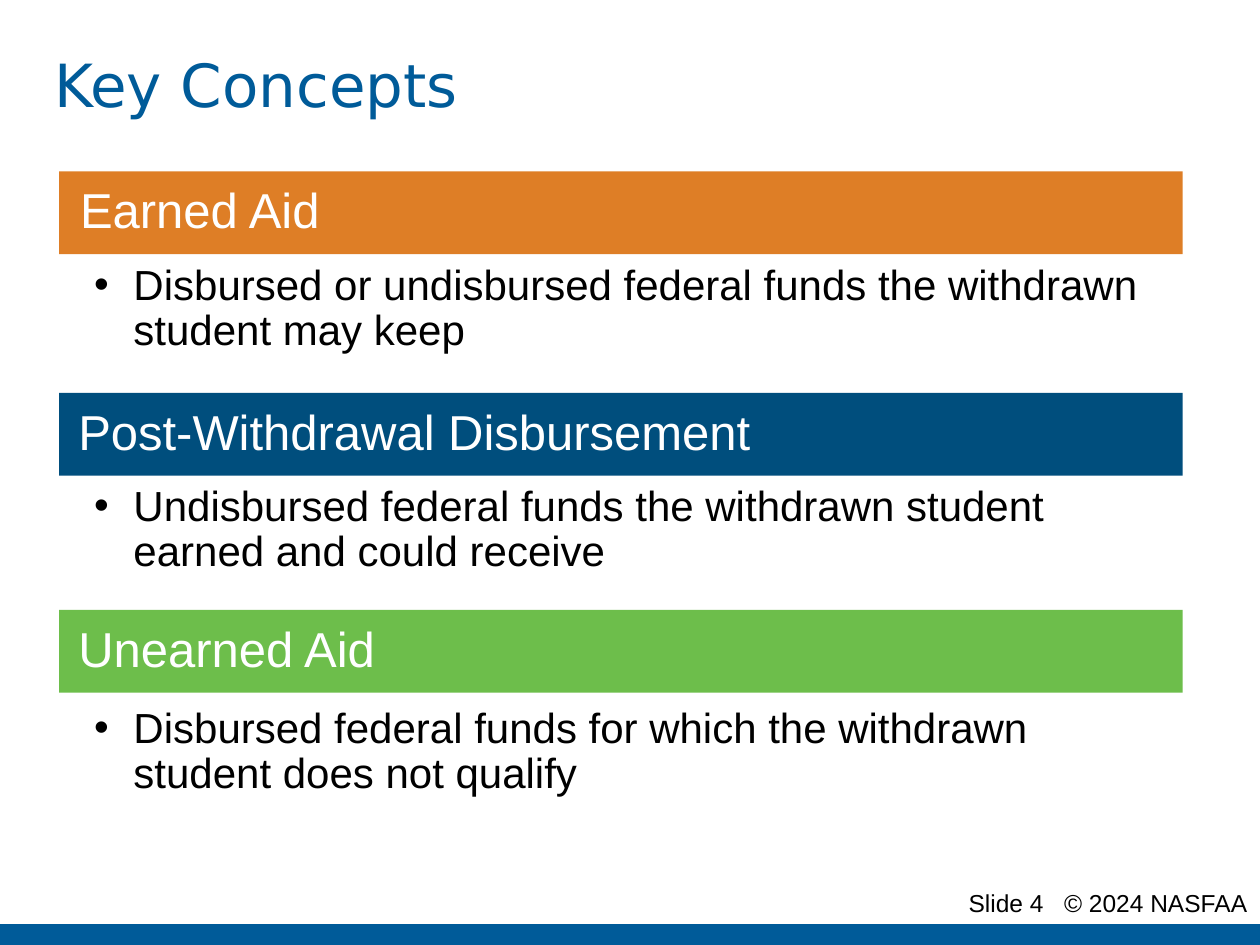
import pptx
import pptx.dml.color
import pptx.enum.shapes
import pptx.enum.text
import pptx.oxml.ns
import pptx.util
from lxml import etree

Pt = pptx.util.Pt
ANCHOR = pptx.enum.text.MSO_ANCHOR
ALIGN = pptx.enum.text.PP_ALIGN

CONCEPTS = [
    ("Earned Aid", "DE7E26", 98, 12,
     "Disbursed or undisbursed federal funds the withdrawn student may keep", 149.8, 73, (20, 1, 3, 1)),
    ("Post-Withdrawal Disbursement", "004E7D", 224.5, 11,
     "Undisbursed federal funds the withdrawn student earned and could receive", 276, 65, (20, 1, 3, 1)),
    ("Unearned Aid", "6DBE4B", 348.5, 11,
     "Disbursed federal funds for which the withdrawn student does not qualify", 400.3, 48, (20, 3.6, 20, 3.6)),
]


def color(value):
    return pptx.dml.color.RGBColor.from_string(value)


def add_bar(page, box, fill):
    bar = page.shapes.add_shape(pptx.enum.shapes.MSO_SHAPE.RECTANGLE, *map(Pt, box))
    bar.shadow.inherit = False
    bar.fill.solid()
    bar.fill.fore_color.rgb = color(fill)
    bar.line.fill.background()
    return bar


def write_text(shape, text, size, fill, font="Arial", insets=(7.2, 3.6, 7.2, 3.6),
               anchor=ANCHOR.TOP, align=ALIGN.LEFT, spacing=1.0):
    frame = shape.text_frame
    frame.text = text
    frame.word_wrap = True
    frame.vertical_anchor = anchor
    frame.margin_left, frame.margin_top, frame.margin_right, frame.margin_bottom = map(Pt, insets)
    para = frame.paragraphs[0]
    para.alignment = align
    para.line_spacing = spacing
    span = para.runs[0]
    span.font.name = font
    span.font.size = Pt(size)
    span.font.color.rgb = color(fill)
    return para


def add_bullet(para, indent):
    properties = para._p.get_or_add_pPr()
    properties.set("marL", str(Pt(indent)))
    properties.set("indent", str(-Pt(indent)))
    font = etree.SubElement(properties, pptx.oxml.ns.qn("a:buFont"))
    font.set("typeface", "Arial")
    bullet = etree.SubElement(properties, pptx.oxml.ns.qn("a:buChar"))
    bullet.set("char", "•")


def add_title(page, box):
    title = page.shapes.add_textbox(*map(Pt, box))
    write_text(title, "Key Concepts", 34, "005B99", "DejaVu Sans", anchor=ANCHOR.MIDDLE)


def add_concept(page, left, width, concept):
    heading, fill, top, inset, detail, detail_top, detail_height, insets = concept
    banner = add_bar(page, (left, top, width, 47.3), fill)
    write_text(banner, heading, 28, "FFFFFF", insets=(inset,) * 4, anchor=ANCHOR.MIDDLE, spacing=0.9)
    body = page.shapes.add_textbox(*map(Pt, (left, detail_top, width, detail_height)))
    para = write_text(body, detail, 24, "000000", insets=insets, spacing=0.9)
    add_bullet(para, 22.5)


def add_footer(page, left, top, width, height):
    add_bar(page, (left, top + height - 12, width, 12), "005B99")
    label = page.shapes.add_textbox(*map(Pt, (left + width - 216, top, 216, 18)))
    write_text(label, "Slide 4   © 2024 NASFAA", 14, "000000", align=ALIGN.RIGHT)


def main():
    deck = pptx.Presentation()
    deck.slide_width, deck.slide_height = Pt(720), Pt(540)
    page = deck.slides.add_slide(deck.slide_layouts[6])
    add_footer(page, 0, 504, 720, 36)
    add_title(page, (24, 12, 670, 72))
    for concept in CONCEPTS:
        add_concept(page, 33.8, 642, concept)
    deck.save("out.pptx")


if __name__ == "__main__":
    main()
